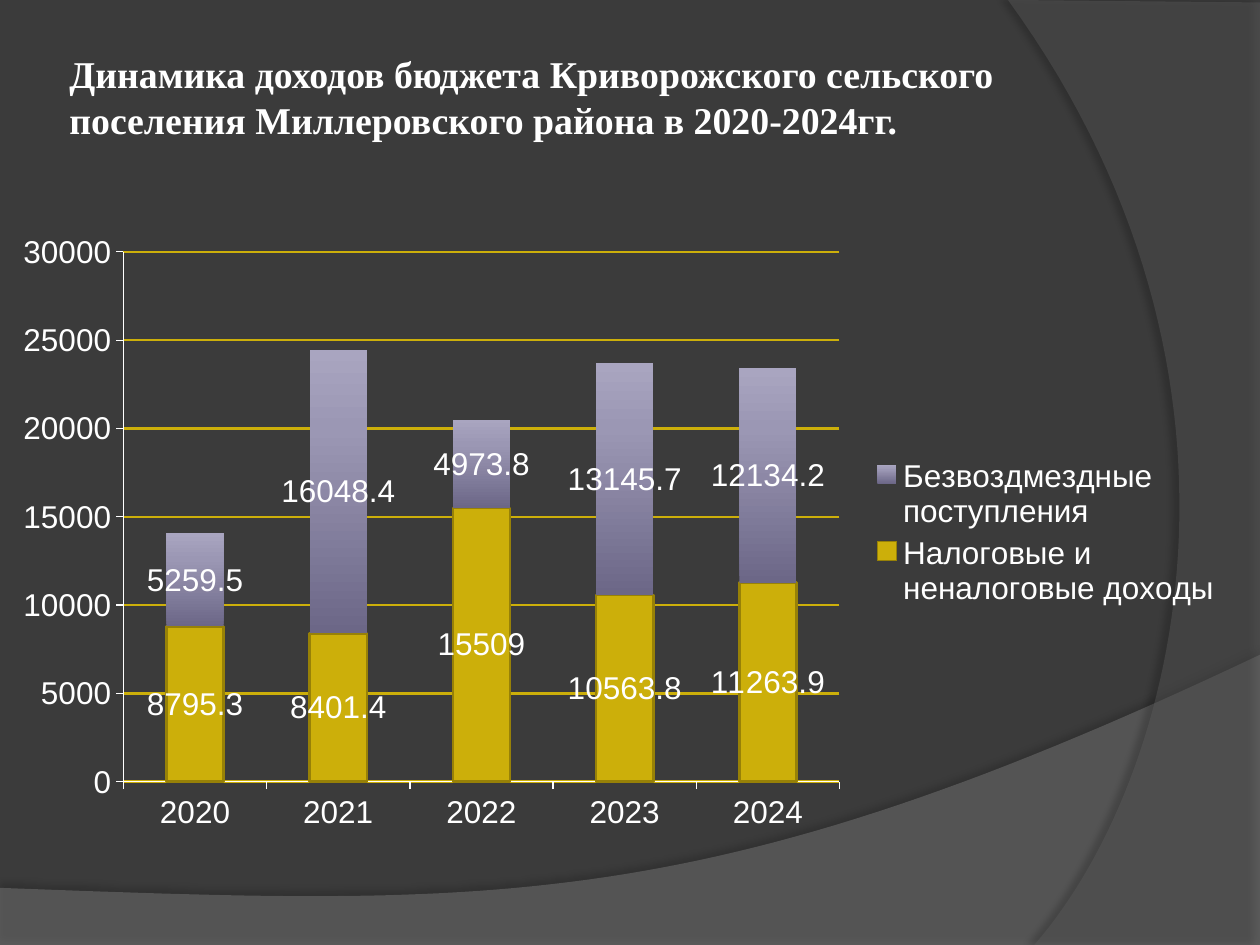
from lxml import etree
from pptx import Presentation
from pptx import util as u
from pptx.chart.data import CategoryChartData
from pptx.dml.color import RGBColor
from pptx.enum import chart as ch, text
from pptx.oxml import ns, parse_xml

# Content
TITLE = ("Динамика доходов бюджета Криворожского сельского "
         "поселения Миллеровского района в 2020-2024гг.")
YEARS = ["2020", "2021", "2022", "2023", "2024"]
OWN_INCOME = ("Налоговые и неналоговые доходы", [8795.3, 8401.4, 15509, 10563.8, 11263.9])
TRANSFERS = ("Безвоздмездные поступления", [5259.5, 16048.4, 4973.8, 13145.7, 12134.2])

BACKGROUND = RGBColor(0x3B, 0x3B, 0x3B)
WHITE = RGBColor(0xFF, 0xFF, 0xFF)
GOLD = RGBColor(0xCC, 0xAF, 0x0A)
DARK_GOLD = RGBColor(0x97, 0x81, 0x07)
LOWER_GREY = RGBColor(0x7F, 0x7F, 0x7F)
RIGHT_GREY = RGBColor(0x5E, 0x5E, 0x5E)
LILAC_STOPS = [(0, "6C6787"), (72, "9B97B4"), (100, "A9A5C0")]
DRAWING = ns.nsdecls("a")


def curve(start, first, second, end, steps=60):
    """Points of a cubic curve after its start."""
    return [tuple((1 - t) ** 3 * a + 3 * (1 - t) ** 2 * t * b
                  + 3 * (1 - t) * t ** 2 * c + t ** 3 * d
                  for a, b, c, d in zip(start, first, second, end))
            for t in (step / steps for step in range(1, steps + 1))]


# Waves in centimetres: outline, colour, opacity, shadow opacity, distance (pt), direction
WAVES = [
    ([(0, 17.9), (0, 19.07), (25.4, 19.07), (25.4, 13.2)]
     + curve((25.4, 13.2), (14.2, 18.52), (9.93, 18.26), (0, 17.9)),
     LOWER_GREY, 45, 35, 3.5, 270),
    ([(25.4, 0.05), (25.4, 19.05), (20.85, 19.05)]
     + curve((20.85, 19.05), (23.75, 15.72), (25.86, 7.62), (20.32, 0)),
     RIGHT_GREY, 40, 45, 4, 180),
]


def add_wave(slide, points, color, opacity, shade, distance, direction):
    corners = [(u.Cm(x), u.Cm(y)) for x, y in points]
    builder = slide.shapes.build_freeform(*corners[0], scale=1.0)
    builder.add_line_segments(corners[1:], close=True)
    wave = builder.convert_to_shape()
    wave.fill.solid()
    wave.fill.fore_color.rgb = color
    wave.line.fill.background()
    wave.shadow.inherit = False
    properties = wave.element.spPr
    solid = properties.find(ns.qn("a:solidFill"))[0]
    etree.SubElement(solid, ns.qn("a:alpha"), val=str(opacity * 1000))
    properties.find(ns.qn("a:effectLst")).append(parse_xml(
        f'<a:outerShdw {DRAWING} blurRad="{u.Pt(4)}" dist="{u.Pt(distance)}" '
        f'dir="{direction * 60000}" rotWithShape="0"><a:srgbClr val="000000">'
        f'<a:alpha val="{shade * 1000}"/></a:srgbClr></a:outerShdw>'))


def add_text(slide, words, left, top, width, height, size, font, color, bold=False):
    box = slide.shapes.add_textbox(u.Cm(left), u.Cm(top), u.Cm(width), u.Cm(height))
    frame = box.text_frame
    frame.word_wrap = True
    frame.vertical_anchor = text.MSO_ANCHOR.TOP
    frame.margin_left = frame.margin_right = u.Cm(0.13)
    frame.margin_top = frame.margin_bottom = u.Cm(0.13)
    span = frame.paragraphs[0].add_run()
    span.text = words
    span.font.size, span.font.name, span.font.bold = u.Pt(size), font, bold
    span.font.color.rgb = color


def set_line(line, color, width):
    line.color.rgb = color
    line.width = u.Pt(width)


def add_income_chart(slide):
    data = CategoryChartData()
    data.categories = YEARS
    for name, values in (OWN_INCOME, TRANSFERS):
        data.add_series(name, values)
    chart = slide.shapes.add_chart(ch.XL_CHART_TYPE.COLUMN_STACKED, u.Cm(0), u.Cm(4.45),
                                   u.Cm(24.89), u.Cm(12.57), data).chart
    chart.has_title = False
    chart.font.size, chart.font.name = u.Pt(18), "Arial"
    chart.font.color.rgb = WHITE
    chart.has_legend = True
    chart.legend.position = ch.XL_LEGEND_POSITION.RIGHT
    chart.legend.include_in_layout = False

    # Axes and grid
    for axis in (chart.category_axis, chart.value_axis):
        axis.major_tick_mark = ch.XL_TICK_MARK.OUTSIDE
        set_line(axis.format.line, WHITE, 0.75)
    value_axis = chart.value_axis
    value_axis.minimum_scale, value_axis.maximum_scale = 0, 30000
    value_axis.major_unit = 5000
    set_line(value_axis.major_gridlines.format.line, GOLD, 1.5)

    # Columns
    plot = chart.plots[0]
    plot.gap_width, plot.overlap = 150, 100
    plot.has_data_labels = True
    plot.data_labels.show_value = True
    own, transfers = plot.series
    own.format.fill.solid()
    own.format.fill.fore_color.rgb = GOLD
    set_line(own.format.line, DARK_GOLD, 1.5)
    stops = "".join(f'<a:gs pos="{place * 1000}"><a:srgbClr val="{color}"/></a:gs>'
                    for place, color in LILAC_STOPS)
    transfers.format.line.fill.background()
    transfers.format.fill.background()
    blank = transfers.format.fill._xPr.find(ns.qn("a:noFill"))
    blank.getparent().replace(blank, parse_xml(
        f'<a:gradFill {DRAWING} rotWithShape="1"><a:gsLst>{stops}</a:gsLst>'
        f'<a:lin ang="{270 * 60000}" scaled="0"/></a:gradFill>'))

    # Plot area as shares of the chart
    area = chart.element.find(".//" + ns.qn("c:plotArea"))
    for old in area.findall(ns.qn("c:layout")):
        area.remove(old)
    shares = "".join(f'<c:{key} val="{share}"/>' for key, share in
                     [("x", 0.1), ("y", 0.05), ("w", 0.58), ("h", 0.85)])
    area.insert(0, parse_xml(
        f'<c:layout {ns.nsdecls("c")}><c:manualLayout><c:layoutTarget val="inner"/>'
        f'<c:xMode val="edge"/><c:yMode val="edge"/>{shares}</c:manualLayout></c:layout>'))


def main():
    deck = Presentation()
    deck.slide_width, deck.slide_height = u.Cm(25.4), u.Cm(19.05)
    slide = deck.slides.add_slide(deck.slide_layouts[6])
    slide.background.fill.solid()
    slide.background.fill.fore_color.rgb = BACKGROUND
    for wave in WAVES:
        add_wave(slide, *wave)
    add_text(slide, TITLE, 1.27, 0.9, 20.75, 2.9, size=21.6,
             font="Times New Roman", color=WHITE, bold=True)
    add_income_chart(slide)
    deck.save("out.pptx")


if __name__ == "__main__":
    main()
